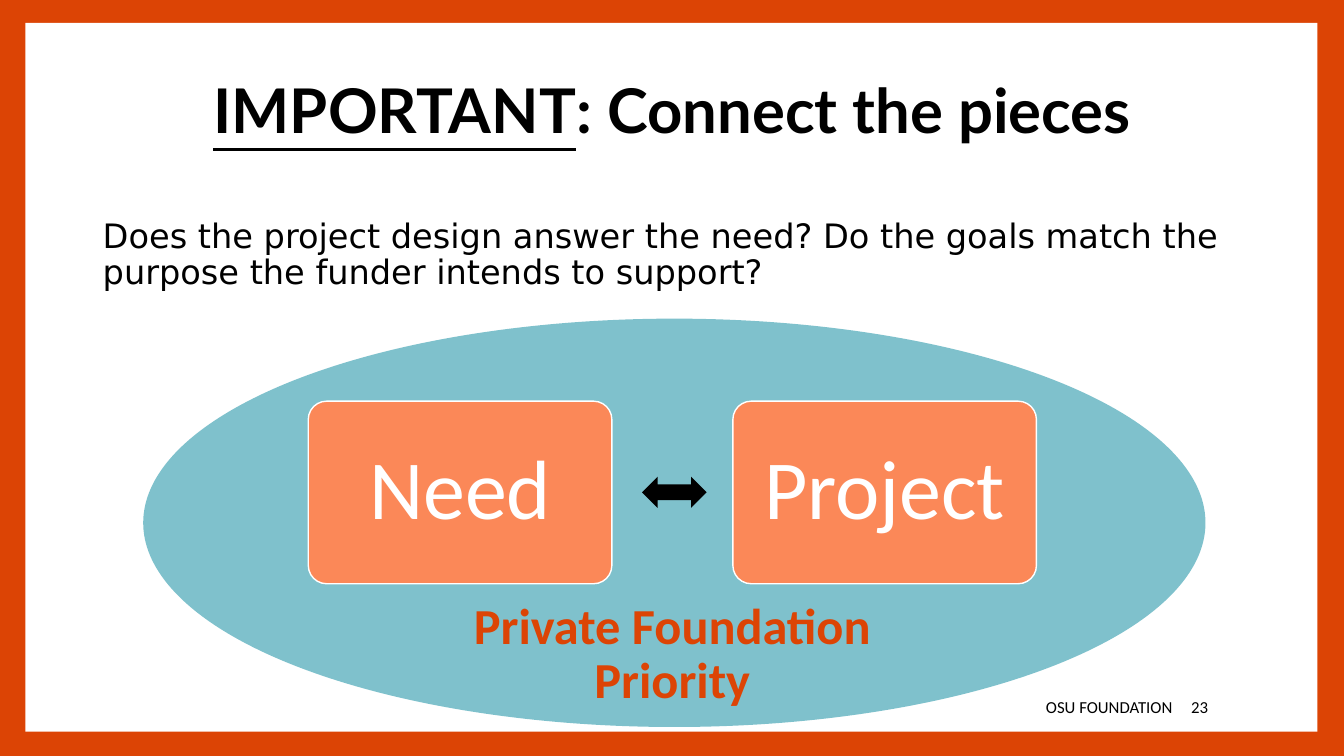
from lxml.etree import SubElement
from pptx import Presentation
from pptx.dml.color import RGBColor
from pptx.enum.shapes import MSO_SHAPE
from pptx.enum.text import MSO_ANCHOR, PP_ALIGN
from pptx.oxml.ns import qn
from pptx.util import Cm, Pt

ORANGE = RGBColor(0xDC, 0x44, 0x05)
CORAL = RGBColor(0xFB, 0x88, 0x58)
TEAL = RGBColor(0x00, 0x85, 0x9B)
BLACK = RGBColor(0, 0, 0)
WHITE = RGBColor(0xFF, 0xFF, 0xFF)

TITLE = {"name": "Lato", "size": Pt(44), "bold": True}
BODY = {"name": "DejaVu Sans", "size": Pt(24)}
FOOTER = {"name": "Calibri", "size": Pt(12)}
PIECE = {"name": "Calibri", "size": Pt(60)}
PRIORITY = {"name": "Calibri", "size": Pt(36), "bold": True}


def write_text(shape, runs, color, font_format, align=PP_ALIGN.LEFT,
               anchor=MSO_ANCHOR.MIDDLE, line_spacing=0.9):
    """Fill the shape with one paragraph; runs are (text, extra font format) pairs."""
    frame = shape.text_frame
    frame.word_wrap = True
    frame.vertical_anchor = anchor
    paragraph = frame.paragraphs[0]
    paragraph.alignment = align
    paragraph.line_spacing = line_spacing
    for text, extra in runs:
        run = paragraph.add_run()
        run.text = text
        run.font.color.rgb = color
        for attribute, value in {**font_format, **extra}.items():
            setattr(run.font, attribute, value)


def add_text(slide, place, runs, color, font_format, **layout):
    box = slide.shapes.add_textbox(*map(Cm, place))
    write_text(box, runs, color, font_format, **layout)


def add_filled_shape(slide, kind, place, color):
    shape = slide.shapes.add_shape(kind, *map(Cm, place))
    shape.shadow.inherit = False
    shape.fill.solid()
    shape.fill.fore_color.rgb = color
    shape.line.fill.background()
    return shape


def set_opacity(shape, percent):
    color = shape.fill._xPr.find(qn("a:solidFill"))[0]
    SubElement(color, qn("a:alpha"), val=str(percent * 1000))


def add_piece(slide, left, label):
    piece = add_filled_shape(slide, MSO_SHAPE.ROUNDED_RECTANGLE,
                             (left, 10.11, 7.65, 4.6), CORAL)
    piece.adjustments[0] = 0.1
    piece.line.color.rgb = WHITE
    piece.line.width = Pt(1)
    write_text(piece, [(label, {})], WHITE, PIECE, align=PP_ALIGN.CENTER)


def main():
    presentation = Presentation()
    presentation.slide_width = Cm(33.87)
    presentation.slide_height = Cm(19.05)
    slide = presentation.slides.add_slide(presentation.slide_layouts[6])
    slide.background.fill.solid()
    slide.background.fill.fore_color.rgb = ORANGE
    add_filled_shape(slide, MSO_SHAPE.RECTANGLE, (0.64, 0.58, 32.56, 17.86), WHITE)

    add_text(slide, (2.34, 1.02, 29.21, 3.68),
             [("IMPORTANT", {"underline": True}), (": Connect the pieces", {})],
             BLACK, TITLE, align=PP_ALIGN.CENTER)
    question = ("Does the project design answer the need? Do the goals match "
                "the purpose the funder intends to support?")
    add_text(slide, (2.34, 5.41, 29.21, 2.31), [(question, {})],
             BLACK, BODY, anchor=MSO_ANCHOR.TOP)
    add_text(slide, (11.23, 17.3, 18.57, 1.02), [("OSU FOUNDATION", {})],
             BLACK, FOOTER, align=PP_ALIGN.RIGHT, line_spacing=1.0)
    add_text(slide, (29.77, 17.3, 1.75, 1.02), [("23", {})],
             BLACK, FOOTER, line_spacing=1.0)

    ellipse = add_filled_shape(slide, MSO_SHAPE.OVAL, (3.61, 8.03, 26.77, 10.29), TEAL)
    set_opacity(ellipse, 50)
    add_piece(slide, 7.77, "Need")
    add_filled_shape(slide, MSO_SHAPE.LEFT_RIGHT_ARROW, (16.18, 12.01, 1.63, 0.79), BLACK)
    add_piece(slide, 18.47, "Project")
    add_text(slide, (11.51, 15.01, 10.87, 2.54), [("Private Foundation Priority", {})],
             ORANGE, PRIORITY, align=PP_ALIGN.CENTER, anchor=MSO_ANCHOR.TOP)

    presentation.save("out.pptx")


if __name__ == "__main__":
    main()
